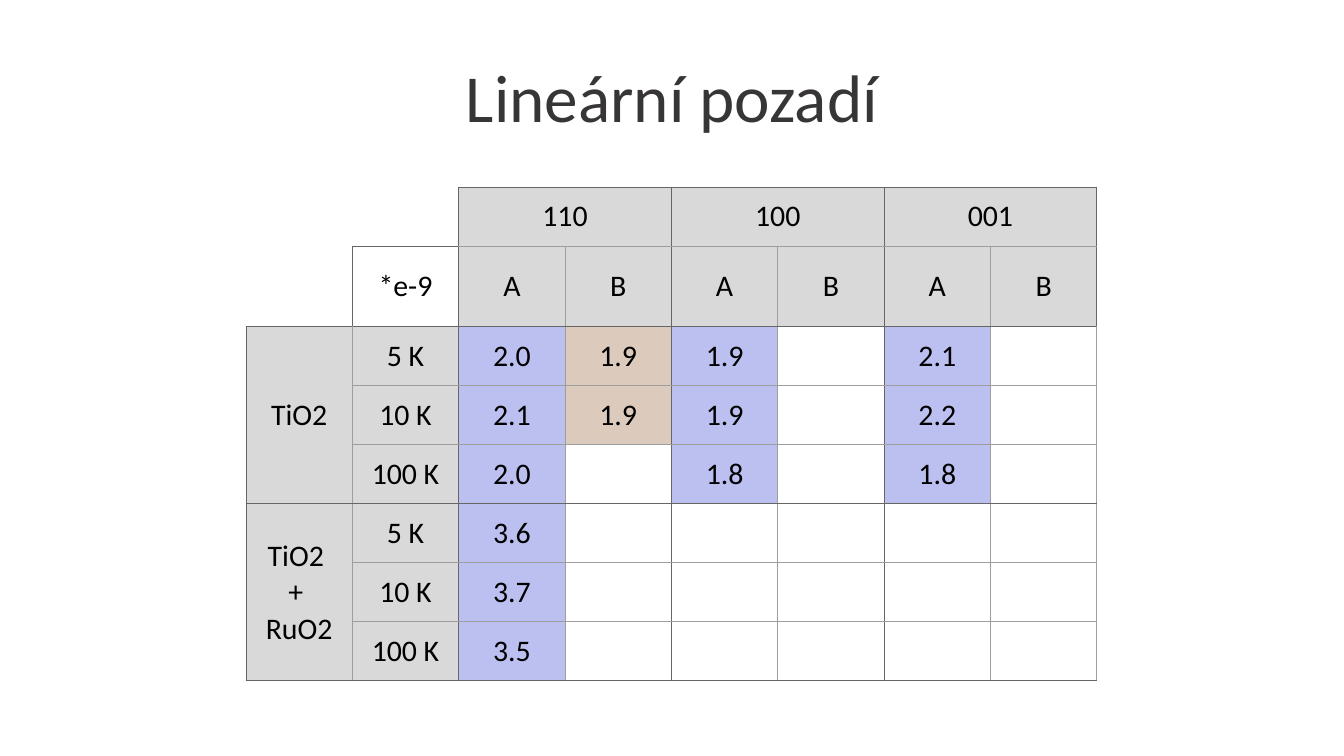
from dataclasses import dataclass
from lxml import etree
from pptx import Presentation
from pptx.dml.color import RGBColor
from pptx.enum.text import MSO_ANCHOR, PP_ALIGN
from pptx.oxml.ns import qn
from pptx.slide import Slide
from pptx.table import Table, _Cell
from pptx.text.text import TextFrame
from pptx.util import Emu, Pt

CENTER = PP_ALIGN.CENTER
MIDDLE = MSO_ANCHOR.MIDDLE
TOP = MSO_ANCHOR.TOP
SCALE = 914400 / 134.4
COLS = 8
HEAD = 2
GROUP = 3
HEX = {
    "title": "383536",
    "text": "000000",
    "head": "D9D9D9",
    "blue": "BCC0F0",
    "tan": "DCCBBD",
    "dark": "666666",
    "light": "9E9E9E",
    "white": "FFFFFF",
}


def px(n: int) -> Emu:
    return Emu(round(n * SCALE))


PAD = {f"margin_{side}": px(11) for side in ("left", "top", "right", "bottom")}
CELL = {**PAD, "vertical_anchor": MIDDLE}
FRAME = {
    **{side: px(13) for side in PAD},
    "vertical_anchor": TOP,
    "word_wrap": True,
}


@dataclass
class Entry:
    row: int
    col: int
    text: str = ""
    fill: str = ""
    high: int = 1
    wide: int = 1


def apply(item: object, values: dict) -> None:
    for name, value in values.items():
        setattr(item, name, value)


def style(frame: TextFrame, text: str, size: int, color: str) -> None:
    frame.text = text
    para = frame.paragraphs[0]
    para.alignment = CENTER
    for run in para.runs:
        apply(run.font, {"name": "Calibri", "size": Pt(size)})
        run.font.color.rgb = RGBColor.from_string(HEX[color])


def upright(x: int, row: int) -> str:
    if row == 0 and x < HEAD or row == 1 and x == 0:
        return "white"
    if row == 1 and x == 1 or row < HEAD and x == COLS:
        return "dark"
    return "dark" if x % 2 == 0 and x < COLS else "light"


def level(y: int, col: int) -> str:
    if y == 0:
        return "white" if col < 2 else "dark"
    if y == 1:
        return "dark" if col == 1 else "light"
    return "dark" if (y - HEAD) % GROUP == 0 else "light"


def border(cell: _Cell, entry: Entry) -> None:
    edges = {
        "L": upright(entry.col, entry.row),
        "R": upright(entry.col + entry.wide, entry.row),
        "T": level(entry.row, entry.col),
        "B": level(entry.row + entry.high, entry.col),
    }
    props = cell._tc.get_or_add_tcPr()
    for spot, (side, color) in enumerate(edges.items()):
        line = etree.Element(qn(f"a:ln{side}"), w=str(Pt(0.6)))
        fill = etree.SubElement(line, qn("a:solidFill"))
        etree.SubElement(fill, qn("a:srgbClr"), val=HEX[color])
        props.insert(spot, line)


def draw(table: Table, entry: Entry) -> None:
    cell = table.cell(entry.row, entry.col)
    if entry.high * entry.wide > 1:
        last = table.cell(entry.row + entry.high - 1, entry.col + entry.wide - 1)
        cell.merge(last)
    if entry.fill:
        cell.fill.solid()
        cell.fill.fore_color.rgb = RGBColor.from_string(HEX[entry.fill])
    else:
        cell.fill.background()
    if entry.text:
        apply(cell, CELL)
        style(cell.text_frame, entry.text, 16, "text")
    border(cell, entry)


def heads() -> list[Entry]:
    out = [Entry(0, 0, high=HEAD), Entry(0, 1), Entry(1, 1, "*e-9")]
    for i, face in enumerate(("110", "100", "001")):
        col = 2 + 2 * i
        out.append(Entry(0, col, face, "head", wide=2))
        out += [Entry(1, col + j, name, "head") for j, name in enumerate("AB")]
    for i, name in enumerate(("TiO2", "TiO2 \v+ \vRuO2")):
        row = HEAD + GROUP * i
        out.append(Entry(row, 0, name, "head", high=GROUP))
        for j, temp in enumerate(("5 K", "10 K", "100 K")):
            out.append(Entry(row + j, 1, temp, "head"))
    return out


def body() -> list[Entry]:
    data = [
        ("2.0", "1.9", "1.9", "", "2.1", ""),
        ("2.1", "1.9", "1.9", "", "2.2", ""),
        ("2.0", "", "1.8", "", "1.8", ""),
        ("3.6", "", "", "", "", ""),
        ("3.7", "", "", "", "", ""),
        ("3.5", "", "", "", "", ""),
    ]
    tints = ("blue", "tan")
    return [
        Entry(HEAD + i, 2 + j, text, tints[j % 2] if text else "")
        for i, row in enumerate(data)
        for j, text in enumerate(row)
    ]


def title(slide: Slide) -> None:
    box = slide.shapes.add_textbox(px(356), px(42), px(632), px(93))
    apply(box.text_frame, FRAME)
    style(box.text_frame, "Lineární pozadí", 36, "title")


def grid(slide: Slide) -> None:
    highs = [59, 81] + [59] * 6
    shape = slide.shapes.add_table(
        len(highs), COLS, px(246), px(187), px(851), px(sum(highs))
    )
    table = shape.table
    apply(table, {"first_row": False, "horz_banding": False})
    for row, high in zip(table.rows, highs):
        row.height = px(high)
    for entry in heads() + body():
        draw(table, entry)


def main() -> None:
    deck = Presentation()
    apply(deck, {"slide_width": px(1344), "slide_height": px(756)})
    slide = deck.slides.add_slide(deck.slide_layouts[6])
    title(slide)
    grid(slide)
    deck.save("out.pptx")


if __name__ == "__main__":
    main()
